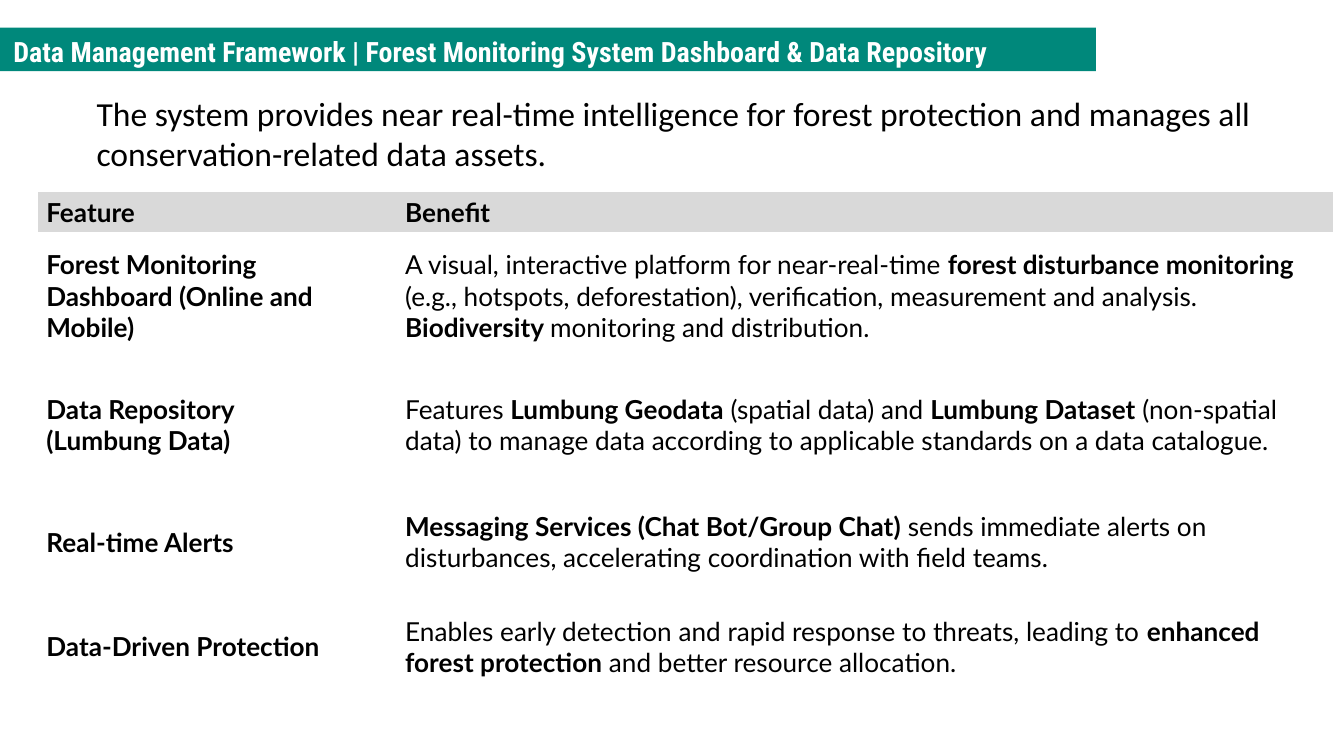
from dataclasses import dataclass

from pptx import Presentation, util as u
from pptx.dml import color
from pptx.enum import shapes, text

PX = u.Inches(1) // 200
COLORS = {"banner": "00887B", "header": "D9D9D9", "ink": "000000", "light": "FFFFFF"}
NO_GRID_STYLE = "{2D5ABB26-0587-4C30-8999-92F81FD0307C}"
COLUMN_WIDTHS = (534, 1392)


@dataclass(frozen=True)
class Span:
    text: str
    bold: bool = False


@dataclass(frozen=True)
class Row:
    feature: str
    benefit: tuple[Span, ...]
    height: int


ROWS = (
    Row("Feature", (Span("Benefit", True),), 48),
    Row(
        "Forest Monitoring Dashboard (Online and Mobile)",
        (
            Span("A visual, interactive platform for near-real-time "),
            Span("forest disturbance monitoring", True),
            Span(" (e.g., hotspots, deforestation), verification, measurement and analysis. "),
            Span("Biodiversity ", True),
            Span("monitoring and distribution."),
        ),
        192,
    ),
    Row(
        "Data Repository \v(Lumbung Data)",
        (
            Span("Features "),
            Span("Lumbung Geodata", True),
            Span(" (spatial data) and "),
            Span("Lumbung Dataset", True),
            Span(
                " (non-spatial data) to manage data according to "
                "applicable standards on a data catalogue."
            ),
        ),
        192,
    ),
    Row(
        "Real-time Alerts",
        (
            Span("Messaging Services (Chat Bot/Group Chat)", True),
            Span(
                " sends immediate alerts on disturbances, "
                "accelerating coordination with field teams."
            ),
        ),
        156,
    ),
    Row(
        "Data-Driven Protection",
        (
            Span("Enables early detection and rapid response to threats, leading to "),
            Span("enhanced forest protection", True),
            Span(" and better resource allocation."),
        ),
        156,
    ),
)


def px(*lengths: int) -> list[int]:
    return [length * PX for length in lengths]


def rgb(name: str) -> color.RGBColor:
    return color.RGBColor.from_string(COLORS[name])


def format_paragraph(paragraph, size: int, family: str, ink: str = "ink", bold=None) -> None:
    paragraph.alignment = text.PP_ALIGN.LEFT
    paragraph.font.size = u.Pt(size)
    paragraph.font.name = family
    paragraph.font.color.rgb = rgb(ink)
    paragraph.font.bold = bold


def format_frame(frame) -> None:
    frame.word_wrap = True
    frame.auto_size = text.MSO_AUTO_SIZE.SHAPE_TO_FIT_TEXT
    frame.vertical_anchor = text.MSO_ANCHOR.TOP


def add_heading(slide) -> None:
    banner = slide.shapes.add_shape(shapes.MSO_SHAPE.RECTANGLE, *px(0, 41, 1631, 65))
    banner.shadow.inherit = False
    banner.fill.solid()
    banner.fill.fore_color.rgb = rgb("banner")
    banner.line.fill.background()

    title = slide.shapes.title
    title.left, title.top, title.width, title.height = px(0, 41, 1976, 70)
    title.text = "Data Management Framework | Forest Monitoring System Dashboard & Data Repository"
    format_frame(title.text_frame)
    format_paragraph(title.text_frame.paragraphs[0], 15, "Roboto Condensed", "light", True)
    banner.element.addnext(title.element)


def add_summary(slide) -> None:
    summary = slide.shapes.add_textbox(*px(124, 128, 1852, 142))
    format_frame(summary.text_frame)
    paragraph = summary.text_frame.paragraphs[0]
    paragraph.text = (
        "The system provides near real-time intelligence for forest protection "
        "and manages all conservation-related data assets."
    )
    format_paragraph(paragraph, 18, "Calibri")


def fill_cell(cell, spans: tuple[Span, ...], is_header: bool) -> None:
    cell.vertical_anchor = text.MSO_ANCHOR.MIDDLE
    cell.margin_left = cell.margin_right = 12 * PX
    cell.margin_top = cell.margin_bottom = 6 * PX
    if is_header:
        cell.fill.solid()
        cell.fill.fore_color.rgb = rgb("header")
    else:
        cell.fill.background()
    paragraph = cell.text_frame.paragraphs[0]
    for span in spans:
        for index, line in enumerate(span.text.split("\v")):
            if index:
                paragraph.add_line_break()
            run = paragraph.add_run()
            run.text = line
            run.font.bold = span.bold
    format_paragraph(paragraph, 14, "Lato")


def add_feature_table(slide) -> None:
    height = sum(row.height for row in ROWS)
    frame = slide.shapes.add_table(
        len(ROWS), len(COLUMN_WIDTHS), *px(57, 286, sum(COLUMN_WIDTHS), height)
    )
    table = frame.table
    table.first_row = table.horz_banding = False
    table._tbl.tblPr[0].text = NO_GRID_STYLE
    for column, width in zip(table.columns, COLUMN_WIDTHS):
        column.width = width * PX
    for index, row in enumerate(ROWS):
        table.rows[index].height = row.height * PX
        fill_cell(table.cell(index, 0), (Span(row.feature, True),), index == 0)
        fill_cell(table.cell(index, 1), row.benefit, index == 0)


def main() -> None:
    presentation = Presentation()
    presentation.slide_width, presentation.slide_height = px(2000, 1125)
    slide = presentation.slides.add_slide(presentation.slide_layouts[5])
    add_heading(slide)
    add_summary(slide)
    add_feature_table(slide)
    presentation.save("out.pptx")


if __name__ == "__main__":
    main()
